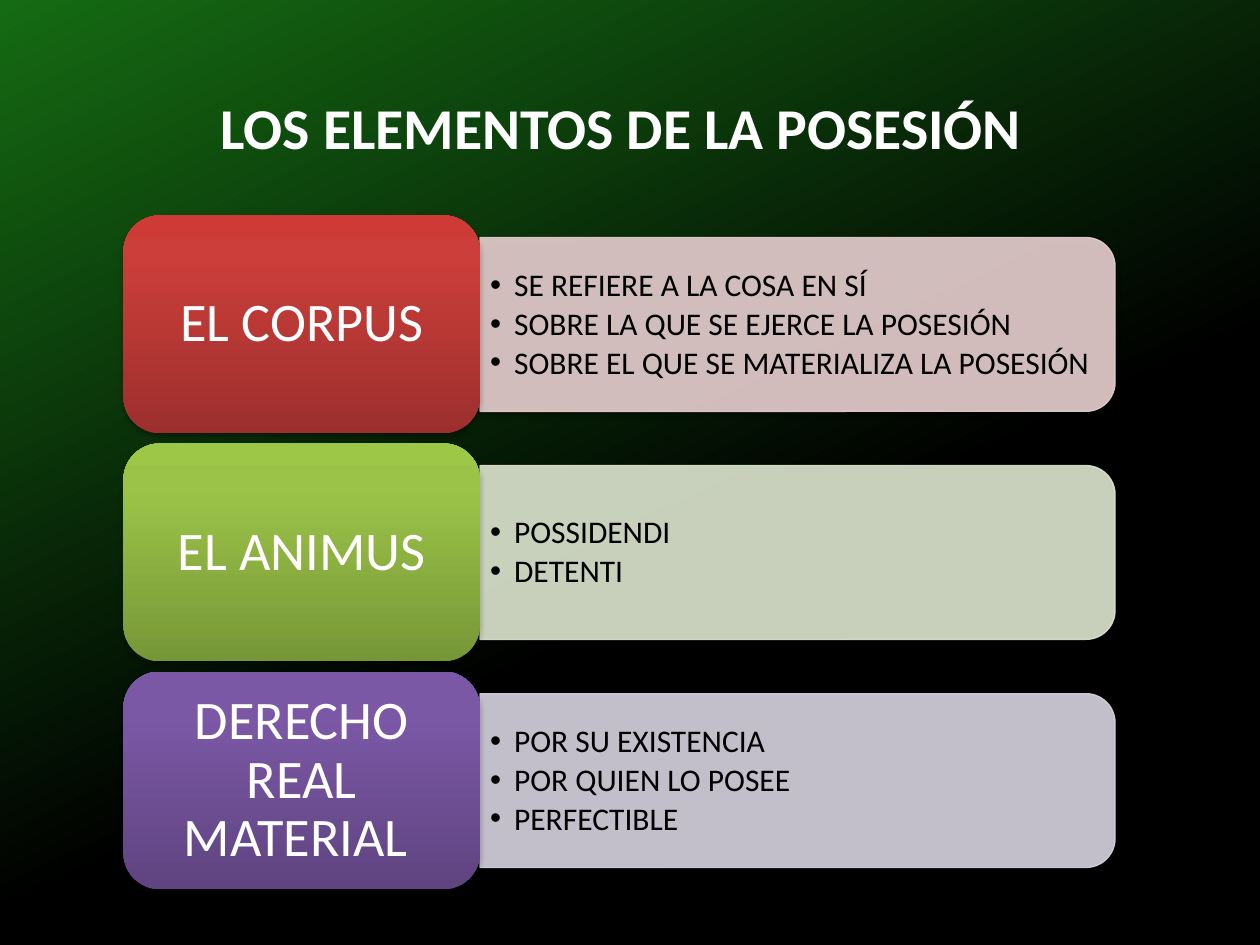
"""Build a slide on the elements of possession: three cards, each with a panel and a list."""
from lxml.etree import SubElement as sub
from pptx import Presentation
from pptx.dml.color import RGBColor
from pptx.enum.shapes import MSO_SHAPE as Kind
from pptx.enum.text import MSO_ANCHOR as Anchor, MSO_AUTO_SIZE as Fit, PP_ALIGN as Align
from pptx.oxml.ns import qn
from pptx.util import Inches, Pt

hue = RGBColor.from_string


def write(frame, lines, size, color, bold=False, align=Align.CENTER, anchor=Anchor.MIDDLE,
          inset=(0.1, 0.05), wrap=True, space=1, after=0, bullet=False):
    frame.auto_size, frame.word_wrap, frame.vertical_anchor = Fit.NONE, wrap, anchor
    frame.margin_left = frame.margin_right = Inches(inset[0])
    frame.margin_top = frame.margin_bottom = Inches(inset[1])
    frame.text = "\n".join(lines)
    for para in frame.paragraphs:
        para.alignment, para.line_spacing = align, space
        para.space_before, para.space_after = Pt(0), Pt(size * after)
        font = para.runs[0].font
        font.name, font.size, font.bold = "Calibri", Pt(size), bold
        font.color.rgb = hue(color)
        if bullet:
            para.level = 1
            props = para._p.get_or_add_pPr()
            props.set("marL", str(Inches(0.19)))
            props.set("indent", str(Inches(-0.19)))
            sub(props, qn("a:buFont"), typeface="Arial")
            sub(props, qn("a:buChar"), char="•")


def shade(fill, root, angle, stops):
    fill.gradient()
    fill.gradient_angle = 360 - angle
    ramp = root.find(".//" + qn("a:gsLst"))
    ramp.clear()
    for spot, color in stops:
        stop = sub(ramp, qn("a:gs"), pos=str(spot * 1000))
        sub(stop, qn("a:srgbClr"), val=color)


deck = Presentation()
deck.slide_width, deck.slide_height = Inches(10), Inches(7.5)
slide = deck.slides.add_slide(deck.slide_layouts[4])
shade(slide.background.fill, slide.element, 245, [(40, "000000"), (100, "156B13")])

title, *lists, spare = slide.placeholders
spare.element.getparent().remove(spare.element)
title.left, title.top, title.width, title.height = map(Inches, (1.61, 0.68, 6.64, 1.21))
write(title.text_frame, ["LOS ELEMENTOS DE LA POSESIÓN"], 33, "FFFFFF", bold=True,
      anchor=Anchor.TOP, wrap=False)

left, top, pitch = 0.98, 1.71, 1.81
wide, high = 2.83, 1.73
long, thick = 5.04, 1.38
rows = [
    ("EL CORPUS", "E8D0D0", ("9C2F2D", "CB3E3A", "CE3B37"),
     ["SE REFIERE A LA COSA EN SÍ", "SOBRE LA QUE SE EJERCE LA POSESIÓN",
      "SOBRE EL QUE SE MATERIALIZA LA POSESIÓN"]),
    ("EL ANIMUS", "DEE7D1", ("779737", "9BC348", "9DC746"), ["POSSIDENDI", "DETENTI"]),
    ("DERECHO REAL MATERIAL ", "D8D3E0", ("5F4480", "7B58A6", "7C57A8"),
     ["POR SU EXISTENCIA", "POR QUIEN LO POSEE", "PERFECTIBLE"]),
]

for row, (name, tint, tones, points) in enumerate(rows):
    y = top + row * pitch
    mid = y + high / 2
    edge = left + wide

    panel = slide.shapes.add_shape(
        Kind.ROUND_2_SAME_RECTANGLE, Inches(edge + (long - thick) / 2),
        Inches(mid - long / 2), Inches(thick), Inches(long))
    panel.rotation = 90
    panel.fill.solid()
    panel.fill.fore_color.rgb = panel.line.color.rgb = hue(tint)
    panel.line.width = Pt(0.75)
    for color in panel.element.spPr.iter(qn("a:srgbClr")):
        sub(color, qn("a:alpha"), val="90000")

    body = lists[row]
    body.left, body.top, body.width, body.height = map(
        Inches, (edge + 0.01, mid - 0.62, 4.97, 1.25))
    slide.shapes._spTree.append(body.element)
    write(body.text_frame, points, 18, "000000", align=Align.LEFT, inset=(0.07, 0.04),
          space=0.9, after=0.15, bullet=True)

    card = slide.shapes.add_shape(
        Kind.ROUNDED_RECTANGLE, Inches(left), Inches(y), Inches(wide), Inches(high))
    shade(card.fill, card.element, 270, zip((0, 80, 100), tones))
    card.line.fill.background()
    write(card.text_frame, [name], 31, "FFFFFF", inset=(0.13, 0.06), space=0.9, after=0.35)

    for shape in (panel, card):
        shape.shadow.inherit = False
        glow = sub(shape.element.spPr.find(qn("a:effectLst")), qn("a:outerShdw"),
                   blurRad=str(Pt(3.1)), dist=str(Pt(1.8)), dir="5400000", rotWithShape="0")
        dark = sub(glow, qn("a:srgbClr"), val="000000")
        sub(dark, qn("a:alpha"), val="35000")

deck.save("out.pptx")
